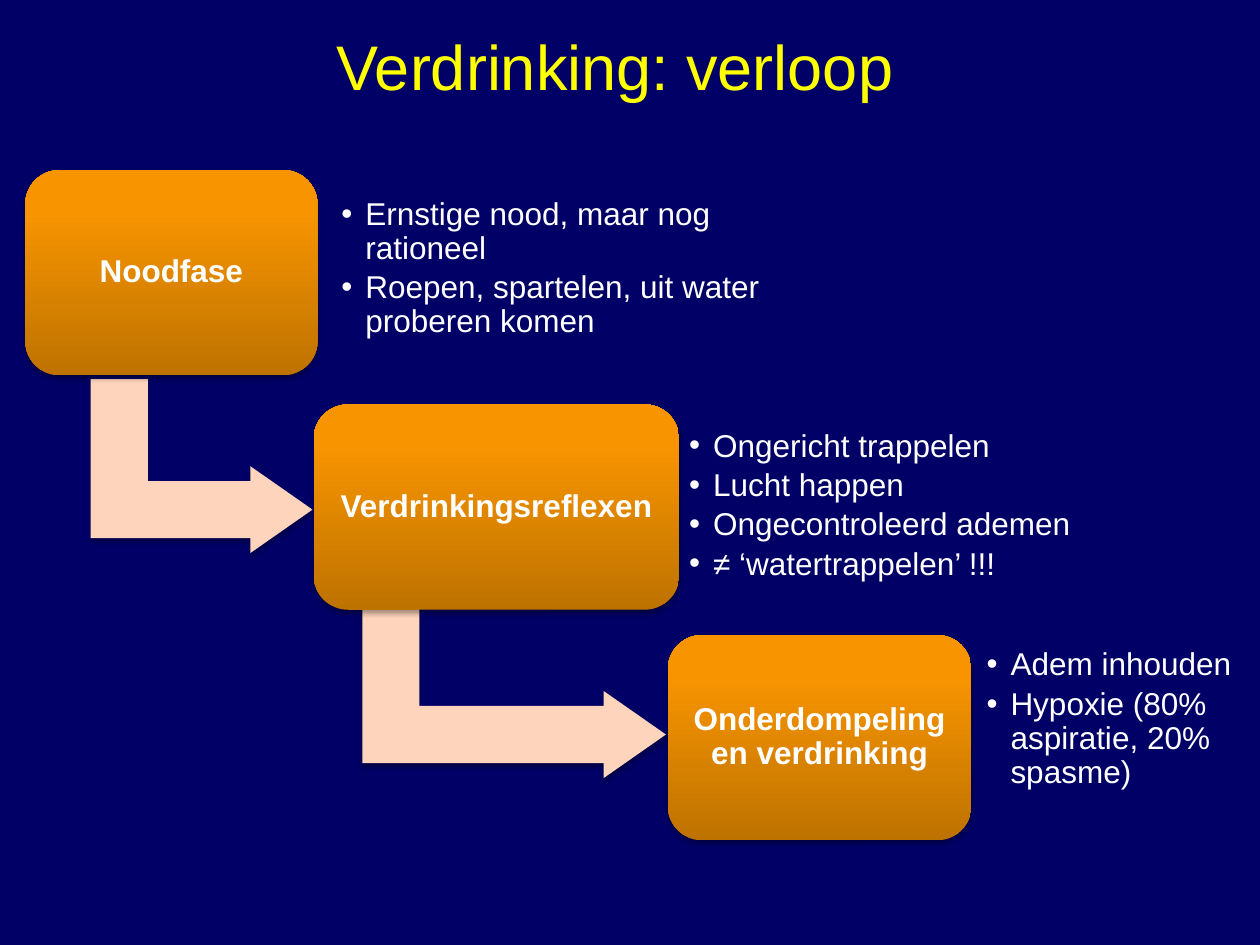
from lxml import etree
from pptx import Presentation
from pptx.dml.color import RGBColor
from pptx.enum.shapes import MSO_SHAPE
from pptx.enum.text import MSO_ANCHOR, MSO_AUTO_SIZE, PP_ALIGN
from pptx.oxml import parse_xml
from pptx.oxml.ns import nsdecls, qn
from pptx.util import Inches, Pt

ROUNDED = MSO_SHAPE.ROUNDED_RECTANGLE
BENT_ARROW = MSO_SHAPE.BENT_UP_ARROW
MIDDLE = MSO_ANCHOR.MIDDLE
CENTER, LEFT = PP_ALIGN.CENTER, PP_ALIGN.LEFT
NO_AUTOFIT = MSO_AUTO_SIZE.NONE

TITLE = "Verdrinking: verloop"
STAGES = [
    {"name": "Noodfase", "box": (0.2, 1.35, 2.32), "list": (2.64, 1.48, 3.54, 1.31),
     "arrow": (0.91, 2.82, 1.76),
     "points": ["Ernstige nood, maar nog rationeel",
                "Roepen, spartelen, uit water proberen komen"]},
    {"name": "Verdrinkingsreflexen", "box": (2.49, 3.21, 2.9), "list": (5.4, 3.36, 3.46, 1.31),
     "arrow": (3.39, 4.28, 2.41),
     "points": ["Ongericht trappelen", "Lucht happen",
                "Ongecontroleerd ademen", "≠ ‘watertrappelen’ !!!"]},
    {"name": "Onderdompeling en verdrinking", "box": (5.3, 5.04, 2.41),
     "list": (7.76, 5.21, 2.22, 1.0), "arrow": None,
     "points": ["Adem inhouden", "Hypoxie (80% aspiratie, 20% spasme)"]},
]
BOX_HEIGHT = 1.63
ARROW_WIDTH = 1.38
ARROW_ADJUSTMENTS = (0.328, 0.25, 0.358)
GRADIENT = [(0, "BE7200"), (80, "F79400"), (100, "F89500")]
BACKGROUND, YELLOW, WHITE, PEACH = "000066", "FFFF00", "FFFFFF", "FFD4BD"
FONT = "Arial"


def color(value):
    return RGBColor.from_string(value)


def write_text(shape, lines, size=18, fill=WHITE, bold=False, align=CENTER,
               inset=0.07, spacing=0.9, after=0, bullet=False):
    frame = shape.text_frame
    frame.word_wrap = True
    frame.auto_size = NO_AUTOFIT
    frame.vertical_anchor = MIDDLE
    frame.margin_left = frame.margin_right = Inches(inset)
    frame.margin_top = frame.margin_bottom = Inches(inset)
    for index, line in enumerate(lines):
        paragraph = frame.paragraphs[0] if index == 0 else frame.add_paragraph()
        paragraph.alignment = align
        paragraph.line_spacing = spacing
        paragraph.space_before = Pt(0)
        paragraph.space_after = Pt(after)
        run = paragraph.add_run()
        run.text = line
        run.font.name = FONT
        run.font.size = Pt(size)
        run.font.bold = bold
        run.font.color.rgb = color(fill)
        if bullet:
            properties = paragraph._p.get_or_add_pPr()
            properties.set("marL", str(Inches(0.19)))
            properties.set("indent", str(-Inches(0.19)))
            etree.SubElement(properties, qn("a:buFont")).set("typeface", FONT)
            etree.SubElement(properties, qn("a:buChar")).set("char", "•")


def add_shadow(shape):
    shape._element.spPr.append(parse_xml(
        f'<a:effectLst {nsdecls("a")}><a:outerShdw blurRad="{Pt(3.1)}" dist="{Pt(1.8)}" '
        'dir="5400000" rotWithShape="0"><a:srgbClr val="000000"><a:alpha val="35000"/>'
        '</a:srgbClr></a:outerShdw></a:effectLst>'))


def fill_gradient(shape):
    shape.fill.gradient()
    shape.fill.gradient_angle = 90
    stops = shape._element.spPr.find(".//" + qn("a:gsLst"))
    for stop in list(stops):
        stops.remove(stop)
    for position, value in GRADIENT:
        stops.append(parse_xml(f'<a:gs {nsdecls("a")} pos="{position * 1000}">'
                               f'<a:srgbClr val="{value}"/></a:gs>'))


def add_arrow(slide, left, top, height):
    arrow = slide.shapes.add_shape(BENT_ARROW, Inches(left), Inches(top),
                                   Inches(ARROW_WIDTH), Inches(height))
    arrow.rotation = 90
    for index, value in enumerate(ARROW_ADJUSTMENTS):
        arrow.adjustments[index] = value
    arrow.fill.solid()
    arrow.fill.fore_color.rgb = color(PEACH)
    arrow.line.fill.background()
    add_shadow(arrow)


def add_stage(slide, stage):
    if stage["arrow"]:
        add_arrow(slide, *stage["arrow"])
    left, top, width = stage["box"]
    box = slide.shapes.add_shape(ROUNDED, Inches(left), Inches(top),
                                 Inches(width), Inches(BOX_HEIGHT))
    fill_gradient(box)
    box.line.fill.background()
    add_shadow(box)
    write_text(box, [stage["name"]], bold=True)
    points = slide.shapes.add_textbox(*map(Inches, stage["list"]))
    write_text(points, stage["points"], align=LEFT, after=3, bullet=True)


def main():
    presentation = Presentation()
    presentation.slide_width, presentation.slide_height = Inches(10), Inches(7.5)
    slide = presentation.slides.add_slide(presentation.slide_layouts[5])
    slide.background.fill.solid()
    slide.background.fill.fore_color.rgb = color(BACKGROUND)
    title = slide.shapes.title
    title.left, title.top = Inches(0.63), Inches(0.34)
    title.width, title.height = Inches(8.5), Inches(0.35)
    write_text(title, [TITLE], size=36, fill=YELLOW, spacing=1.0)
    for stage in STAGES:
        add_stage(slide, stage)
    presentation.save("out.pptx")


if __name__ == "__main__":
    main()
